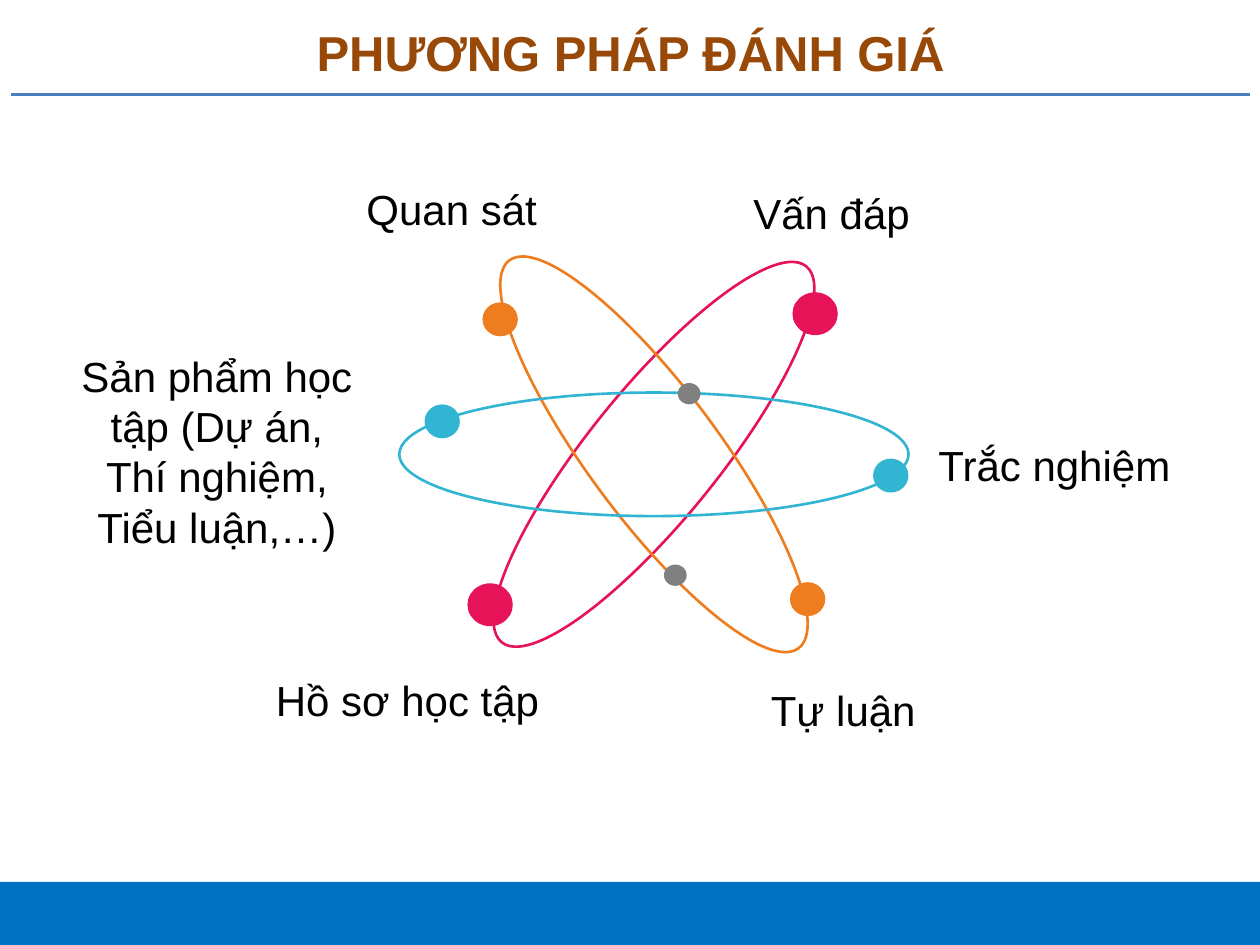
"""Build the assessment methods slide with its atom diagram."""
import pptx
import pptx.util
import pptx.dml.color
import pptx.enum.shapes
import pptx.enum.text
import pptx.oxml.xmlchemy
import lxml.etree

Pt = pptx.util.Pt
RGB = pptx.dml.color.RGBColor
SHAPE = pptx.enum.shapes.MSO_SHAPE
ALIGN = pptx.enum.text.PP_ALIGN

BLUE = RGB(0x00, 0x70, 0xC0)
RULE = RGB(0x4B, 0x7E, 0xBC)
BROWN = RGB(0x98, 0x48, 0x07)
BLACK = RGB(0, 0, 0)
PINK = RGB(0xE6, 0x13, 0x58)
ORANGE = RGB(0xED, 0x7D, 0x1F)
CYAN = RGB(0x32, 0xB5, 0xD3)
GRAY = RGB(0x80, 0x80, 0x80)

TITLE = "PHƯƠNG PHÁP ĐÁNH GIÁ"
CENTER = (373.7, 259.6)
ORBITS = [(276.5, 74.2, 309, PINK), (276.5, 74.2, 53.3, ORANGE), (291, 70.6, 0, CYAN)]
LARGE, MEDIUM, SMALL = (25.9, 24.5), (20.2, 19.4), (13, 12.2)
ELECTRONS = [
    (465.8, 179.3, LARGE, PINK),
    (280.1, 345.6, LARGE, PINK),
    (285.8, 182.5, MEDIUM, ORANGE),
    (461.5, 342.4, MEDIUM, ORANGE),
    (509, 271.8, MEDIUM, CYAN),
    (252.7, 240.8, MEDIUM, CYAN),
    (393.8, 225, SMALL, GRAY),
    (385.9, 328.7, SMALL, GRAY),
]
LABELS = [
    ("Quan sát", 202.3, 101.5, 144.7, 36, ALIGN.LEFT),
    ("Vấn đáp", 423.4, 103.7, 151.2, 36, ALIGN.LEFT),
    ("Trắc nghiệm", 529.2, 247.7, 151.2, 36, ALIGN.LEFT),
    ("Tự luận", 433.4, 387.4, 151.2, 36, ALIGN.LEFT),
    ("Sản phẩm học tập (Dự án, Thí nghiệm, Tiểu luận,…)", 38.2, 195.8, 171.4, 123.8, ALIGN.CENTER),
    ("Hồ sơ học tập", 150.5, 381.6, 209.5, 36, ALIGN.LEFT),
]


def add_text(s, text, x, y, w, h, size=24, color=BLACK, bold=False, align=ALIGN.LEFT):
    tf = s.shapes.add_textbox(Pt(x), Pt(y), Pt(w), Pt(h)).text_frame
    tf.word_wrap = True
    tf.vertical_anchor = pptx.enum.text.MSO_ANCHOR.MIDDLE
    p = tf.paragraphs[0]
    p.alignment = align
    r = p.add_run()
    r.text = text
    r.font.name, r.font.size, r.font.bold = "Arial", Pt(size), bold
    r.font.color.rgb = color


def add_shape(shapes, kind, x, y, w, h, fill=None, line=None):
    sp = shapes.add_shape(kind, Pt(x), Pt(y), Pt(w), Pt(h))
    sp.shadow.inherit = False
    if fill is None:
        sp.fill.background()
    else:
        sp.fill.solid()
        sp.fill.fore_color.rgb = fill
    if line is None:
        sp.line.fill.background()
    else:
        sp.line.color.rgb = line
        sp.line.width = Pt(1.5)
    return sp


def add_rule(s, x1, x2, y):
    sp = s.shapes.add_connector(
        pptx.enum.shapes.MSO_CONNECTOR.STRAIGHT, Pt(x1), Pt(y), Pt(x2), Pt(y))
    sp.line.color.rgb = RULE
    sp.line.width = Pt(2)
    lxml.etree.SubElement(sp._element.spPr, pptx.oxml.ns.qn("a:effectLst"))


def add_atom(s):
    shapes = s.shapes.add_group_shape().shapes
    cx, cy = CENTER
    for w, h, angle, color in ORBITS:
        sp = add_shape(shapes, SHAPE.OVAL, cx - w / 2, cy - h / 2, w, h, line=color)
        sp.rotation = angle
    for x, y, (w, h), color in ELECTRONS:
        add_shape(shapes, SHAPE.OVAL, x - w / 2, y - h / 2, w, h, fill=color)


def main():
    prs = pptx.Presentation()
    prs.slide_width, prs.slide_height = Pt(720), Pt(540)
    s = prs.slides.add_slide(prs.slide_layouts[6])
    add_shape(s.shapes, SHAPE.RECTANGLE, -2.9, 504, 725.8, 36, fill=BLUE)
    add_rule(s, 6.5, 714.2, 54)
    add_text(s, TITLE, 12.2, 5.8, 696.2, 48.2, size=28, color=BROWN, bold=True, align=ALIGN.CENTER)
    add_atom(s)
    for text, x, y, w, h, align in LABELS:
        add_text(s, text, x, y, w, h, align=align)
    prs.save("out.pptx")


if __name__ == "__main__":
    main()
